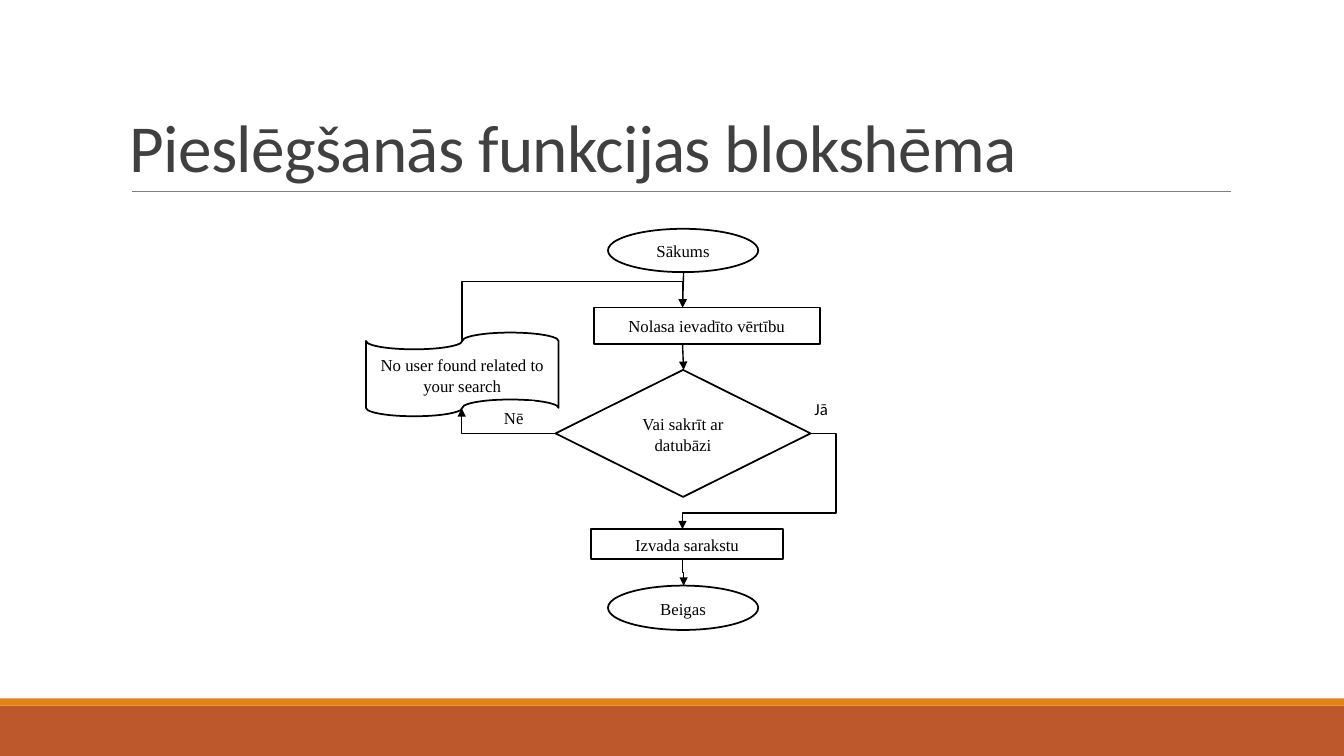
"""Build the login flowchart slide."""
from lxml import etree
from pptx import Presentation
from pptx import util as u
from pptx.dml.color import RGBColor
from pptx.enum import shapes, text
from pptx.oxml.ns import qn

THEME = {
    "ink": "000000", "paper": "FFFFFF", "title": "404040", "rule": "808080",
    "bar": "BD582C", "trim": "E48312",
    "head": "Calibri", "body": "Times New Roman",
    "big": 48, "small": 12, "edge": 1.25, "wire": 1, "thin": 0.5,
}
KIND = shapes.MSO_SHAPE
TITLE = ("Pieslēgšanās funkcijas blokshēma", (1.19, 0.31, 11.01, 1.59))
PANELS = [
    ((0, 7, 13.33, 0.5), "bar"),
    ((0, 6.93, 13.33, 0.07), "trim"),
    ((3.26, 2.2, 6.5, 4.22), "paper"),
]
NODES = [
    ("Sākums", KIND.OVAL, (6.03, 2.27, 1.49, 0.43)),
    ("Nolasa ievadīto vērtību", KIND.RECTANGLE, (5.89, 3.05, 2.24, 0.36)),
    ("Vai sakrīt ar datubāzi", KIND.DIAMOND, (5.51, 3.67, 2.53, 1.26)),
    ("No user found related to your search", KIND.WAVE, (3.63, 3.3, 1.91, 0.83)),
    ("Izvada sarakstu", KIND.RECTANGLE, (5.86, 5.25, 1.91, 0.3)),
    ("Beigas", KIND.OVAL, (6.03, 5.81, 1.49, 0.44)),
]
NODES[3] = (NODES[3][0], KIND.FLOWCHART_PUNCHED_TAPE, NODES[3][2])
LABELS = [
    ("Nē", "body", (4.9, 3.98, 0.4, 0.33)),
    ("Jā", "head", (7.98, 3.89, 0.34, 0.33)),
]
ARROWS = [
    ((6.78, 2.7), (6.77, 3.05)),
    ((6.77, 3.42), (6.78, 3.67)),
]
ELBOWS = [
    ((8.04, 4.3), (6.77, 5.25), "bentConnector4", (-0.2, 0.83), False),
    ((5.51, 4.3), (4.58, 4.05), "bentConnector2", (), False),
    ((4.58, 3.39), (6.77, 3.05), "bentConnector3", (1.75,), True),
    ((6.77, 5.55), (6.78, 5.81), "bentConnector3", (0.5,), True),
]


def tone(name):
    return RGBColor.from_string(THEME[name])


def write(shape, words, *, font="body", size="small", color="ink",
          align=text.PP_ALIGN.LEFT, anchor=text.MSO_ANCHOR.TOP,
          wrap=True, space=1.07, after=8, track=None):
    frame = shape.text_frame
    frame.word_wrap = wrap
    frame.vertical_anchor = anchor
    para = frame.paragraphs[0]
    para.alignment = align
    para.line_spacing = space
    para.space_after = u.Pt(after)
    run = para.add_run()
    run.text = words
    run.font.name = THEME[font]
    run.font.size = u.Pt(THEME[size])
    run.font.color.rgb = tone(color)
    if track is not None:
        run.font._element.set("spc", str(round(track * 100)))


def block(slide, kind, box, fill="paper", edge=False):
    shape = slide.shapes.add_shape(kind, *map(u.Inches, box))
    shape.shadow.inherit = False
    shape.fill.solid()
    shape.fill.fore_color.rgb = tone(fill)
    if edge:
        shape.line.color.rgb = tone("ink")
        shape.line.width = u.Pt(THEME["edge"])
    else:
        shape.line.fill.background()
    return shape


def wire(slide, start, end, color="ink", width="wire", arrow=True,
         kind=shapes.MSO_CONNECTOR.STRAIGHT):
    line = slide.shapes.add_connector(kind, *map(u.Inches, (*start, *end)))
    line.line.color.rgb = tone(color)
    line.line.width = u.Pt(THEME[width])
    props = line._element.spPr
    if arrow:
        etree.SubElement(props.find(qn("a:ln")), qn("a:tailEnd"), type="triangle")
    etree.SubElement(props, qn("a:effectLst"))
    return props


def elbow(slide, start, end, form, bends, turned):
    if turned:
        mid = [(a + b) / 2 for a, b in zip(start, end)]
        start, end = [(mid[0] + y - mid[1], mid[1] - x + mid[0])
                      for x, y in (start, end)]
    props = wire(slide, start, end, kind=shapes.MSO_CONNECTOR.ELBOW)
    if turned:
        props.find(qn("a:xfrm")).set("rot", str(90 * 60000))
    geom = props.find(qn("a:prstGeom"))
    geom.set("prst", form)
    guides = geom.find(qn("a:avLst"))
    for num, bend in enumerate(bends, 1):
        etree.SubElement(guides, qn("a:gd"), name=f"adj{num}",
                         fmla=f"val {round(bend * 100000)}")


def main():
    deck = Presentation()
    deck.slide_width, deck.slide_height = u.Inches(13.33), u.Inches(7.5)
    slide = deck.slides.add_slide(deck.slide_layouts[6])
    for box, fill in PANELS:
        block(slide, KIND.RECTANGLE, box, fill)
    wire(slide, (1.31, 1.9), (12.21, 1.9), "rule", "thin", arrow=False)
    words, box = TITLE
    write(slide.shapes.add_textbox(*map(u.Inches, box)), words, font="head",
          size="big", color="title", anchor=text.MSO_ANCHOR.BOTTOM,
          space=0.85, after=0, track=-0.5)
    for words, kind, box in NODES:
        write(block(slide, kind, box, edge=True), words,
              align=text.PP_ALIGN.CENTER, anchor=text.MSO_ANCHOR.MIDDLE)
    for words, font, box in LABELS:
        write(block(slide, KIND.RECTANGLE, box), words, font=font, wrap=False)
    for start, end in ARROWS:
        wire(slide, start, end)
    for route in ELBOWS:
        elbow(slide, *route)
    deck.save("out.pptx")


if __name__ == "__main__":
    main()
